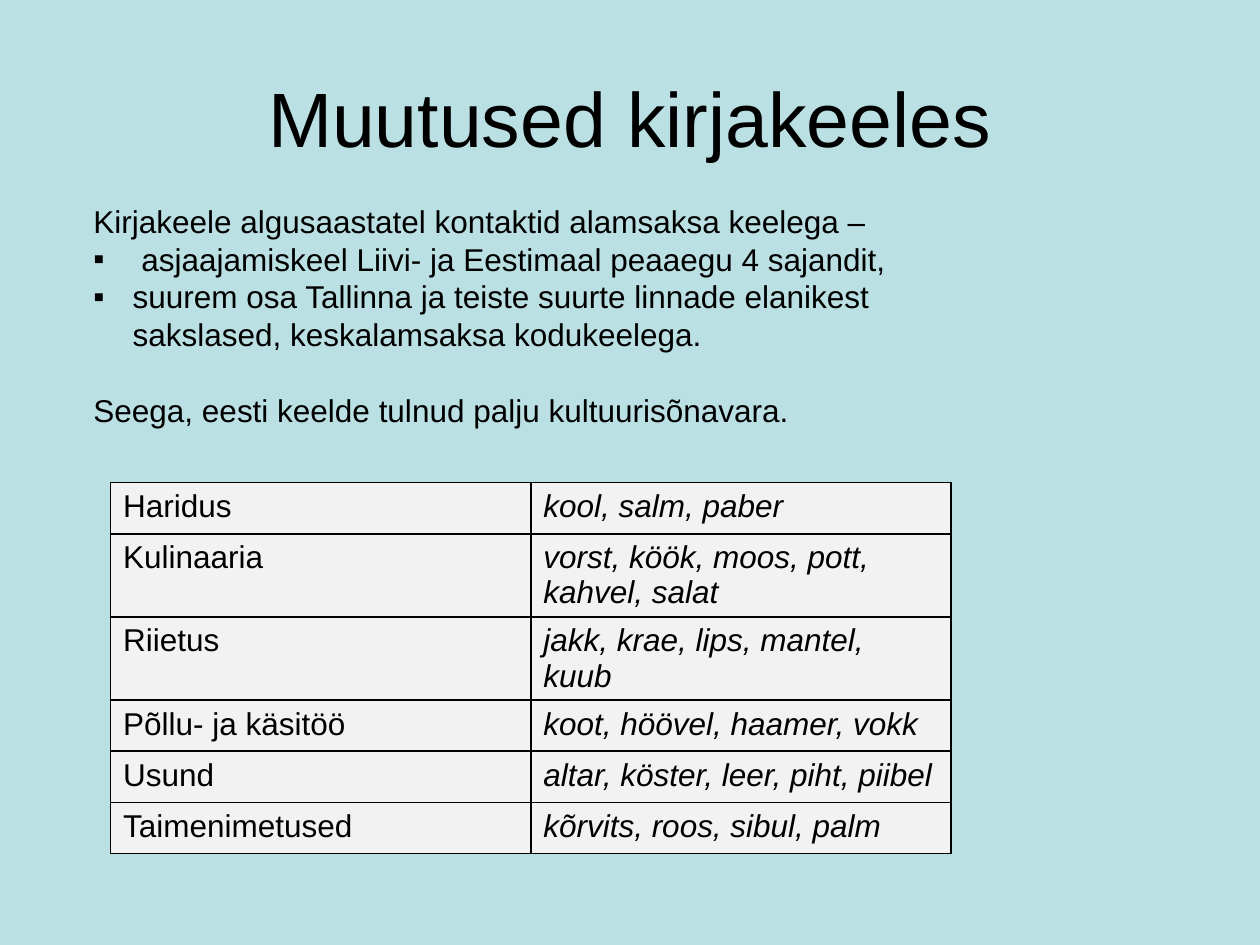
from lxml import etree
from pptx import Presentation
from pptx.dml.color import RGBColor
from pptx.enum import text
from pptx.oxml import ns
from pptx.util import Cm, Pt

BACKGROUND = RGBColor(0xBB, 0xE0, 0xE3)
CELL = RGBColor(0xF2, 0xF2, 0xF2)
BLACK = RGBColor(0, 0, 0)
FONT = "Arial"
LINE = Pt(21.6)
INDENT = Cm(0.79)

INTRO = "Kirjakeele algusaastatel kontaktid alamsaksa keelega –"
POINTS = [
    " asjaajamiskeel Liivi- ja Eestimaal peaaegu 4 sajandit,",
    "suurem osa Tallinna ja teiste suurte linnade elanikest "
    "sakslased, keskalamsaksa kodukeelega.",
]
CONCLUSION = "Seega, eesti keelde tulnud palju kultuurisõnavara."
LOANWORDS = [
    ("Haridus", "kool, salm, paber"),
    ("Kulinaaria", "vorst, köök, moos, pott, kahvel, salat"),
    ("Riietus", "jakk, krae, lips, mantel, kuub"),
    ("Põllu- ja käsitöö", "koot, höövel, haamer, vokk"),
    ("Usund", "altar, köster, leer, piht, piibel"),
    ("Taimenimetused", "kõrvits, roos, sibul, palm"),
]


def write(p, content, size=18, italic=False, align=text.PP_ALIGN.LEFT):
    p.alignment = align
    r = p.add_run()
    r.text = content
    r.font.name, r.font.size = FONT, Pt(size)
    r.font.italic = italic
    r.font.color.rgb = BLACK


def place(sp, left, top, width, height, anchor):
    sp.left, sp.top, sp.width, sp.height = map(Cm, (left, top, width, height))
    tf = sp.text_frame
    tf.word_wrap = True
    tf.auto_size = text.MSO_AUTO_SIZE.NONE
    tf.vertical_anchor = anchor
    return tf


def set_bullet(p, char=None):
    """Give the paragraph a hanging bullet, or none without a character."""
    pPr = p._p.get_or_add_pPr()
    indent = INDENT if char else 0
    pPr.set("marL", str(indent))
    pPr.set("indent", str(-indent))
    if char:
        etree.SubElement(pPr, ns.qn("a:buFont")).set("typeface", FONT)
        etree.SubElement(pPr, ns.qn("a:buChar")).set("char", char)
    else:
        etree.SubElement(pPr, ns.qn("a:buNone"))


def add_title(s, content):
    tf = place(s.shapes.title, 1.27, 0.76, 22.86, 3.18, text.MSO_ANCHOR.MIDDLE)
    write(tf.paragraphs[0], content, size=44, align=text.PP_ALIGN.CENTER)


def add_body(s):
    tf = place(s.placeholders[1], 1.63, 3.94, 17.55, 4.88, text.MSO_ANCHOR.TOP)
    lines = [(INTRO, None, 0), *((point, "▪", 0) for point in POINTS),
             (CONCLUSION, None, LINE)]
    for i, (content, bullet, gap) in enumerate(lines):
        p = tf.add_paragraph() if i else tf.paragraphs[0]
        p.line_spacing, p.space_before, p.space_after = LINE, gap, 0
        set_bullet(p, bullet)
        write(p, content)


def set_borders(cell):
    tcPr = cell._tc.get_or_add_tcPr()
    for side in ("lnL", "lnR", "lnT", "lnB"):
        ln = etree.SubElement(tcPr, ns.qn(f"a:{side}"), w=str(Pt(1)))
        fill = etree.SubElement(ln, ns.qn("a:solidFill"))
        etree.SubElement(fill, ns.qn("a:srgbClr"), val=str(BLACK))


def add_loanword_table(s):
    rows = len(LOANWORDS)
    tbl = s.shapes.add_table(rows, 2, Cm(2.23), Cm(9.73),
                             Cm(16.94), Cm(1.03 * rows)).table
    tbl.first_row = tbl.horz_banding = False
    for row, words in zip(tbl.rows, LOANWORDS):
        for col, (cell, content) in enumerate(zip(row.cells, words)):
            set_borders(cell)
            cell.fill.solid()
            cell.fill.fore_color.rgb = CELL
            write(cell.text_frame.paragraphs[0], content, italic=col == 1)


def main():
    prs = Presentation()
    prs.slide_width, prs.slide_height = Cm(25.4), Cm(19.05)
    s = prs.slides.add_slide(prs.slide_layouts[1])
    s.background.fill.solid()
    s.background.fill.fore_color.rgb = BACKGROUND
    add_title(s, "Muutused kirjakeeles")
    add_body(s)
    add_loanword_table(s)
    prs.save("out.pptx")


if __name__ == "__main__":
    main()
